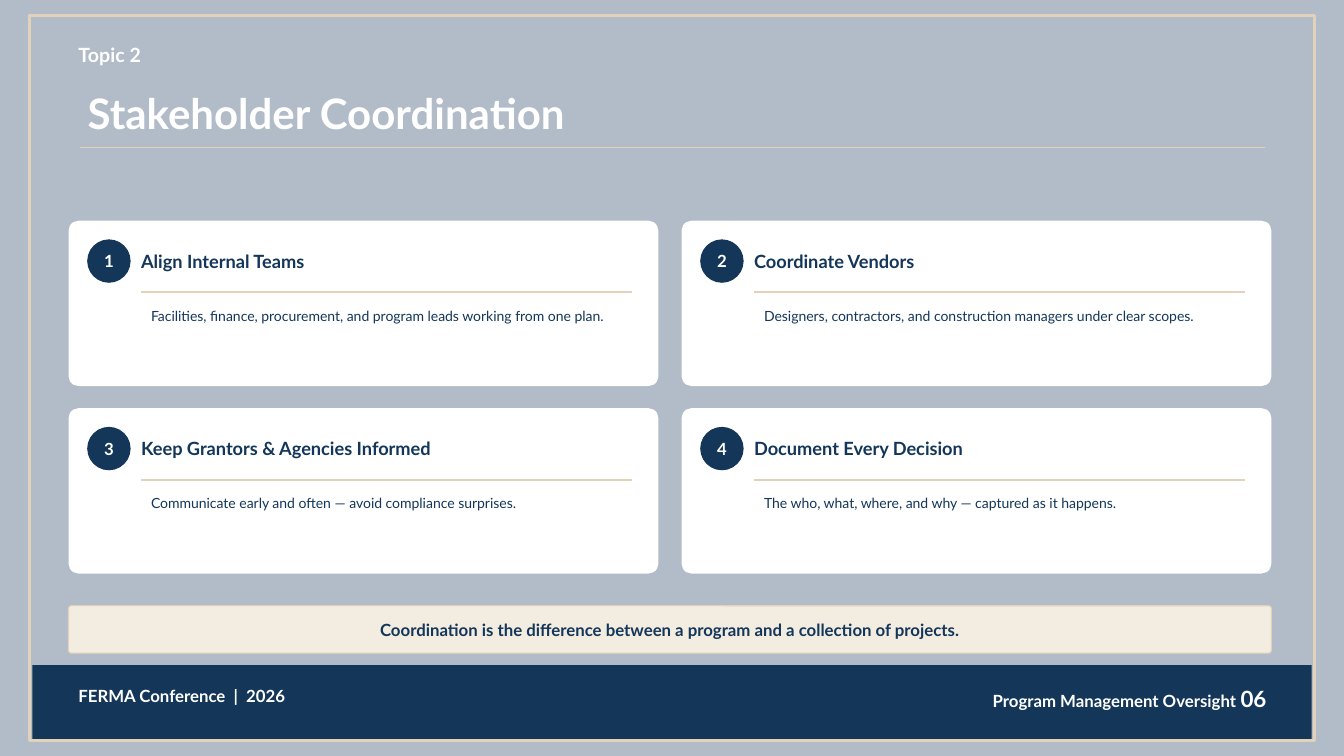
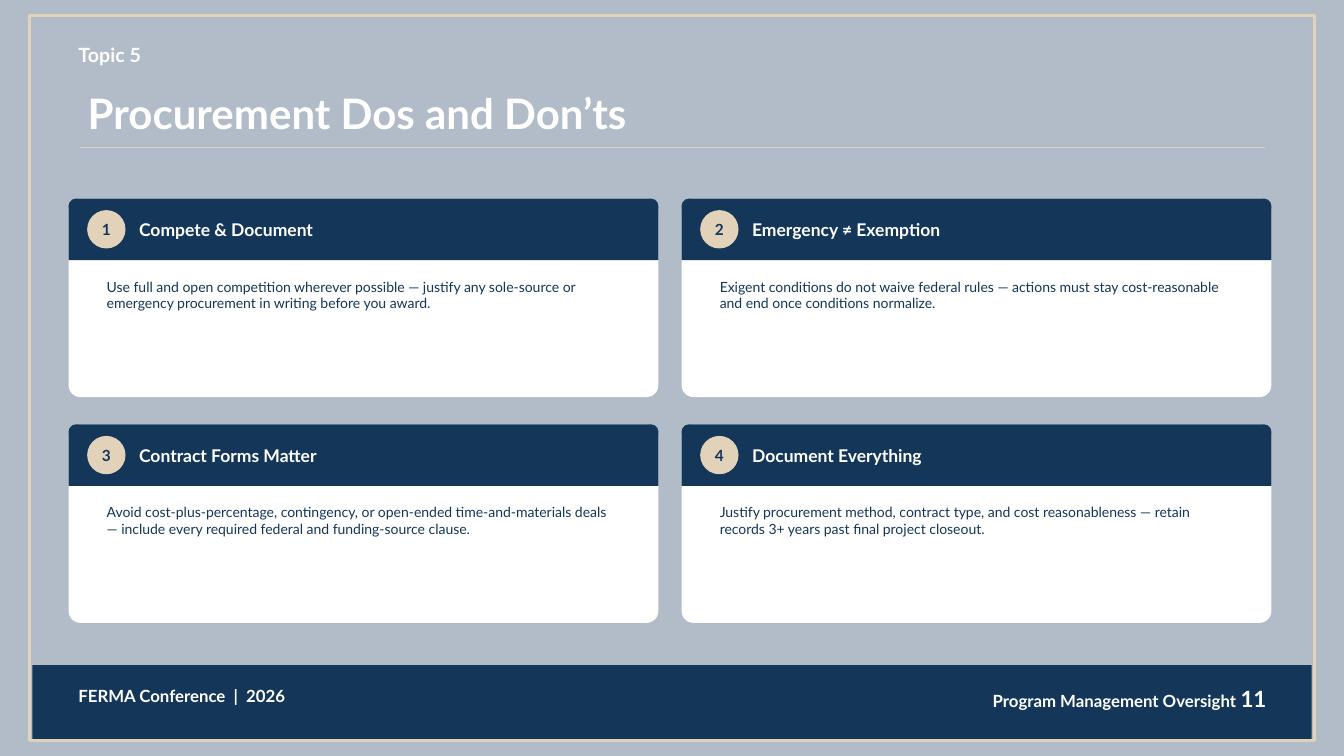
from dataclasses import dataclass
from typing import Callable, NamedTuple

from pptx import Presentation
from pptx.dml.color import RGBColor
from pptx.enum.shapes import MSO_CONNECTOR, MSO_SHAPE as Shape
from pptx.enum.text import MSO_ANCHOR as Anchor, MSO_AUTO_SIZE as AutoSize, PP_ALIGN as Align
from pptx.oxml.ns import qn
from pptx.slide import Slide
from pptx.util import Inches, Pt

COLORS = {
    "bg": "B1BCC8",
    "navy": "133659",
    "sand": "E2D2B9",
    "cream": "F3ECE1",
    "white": "FFFFFF",
}
FONT = "Lato"
MARGIN = 0.68
CARD_W = 5.85
COL_STEP = 6.08
COLS = 2
CONTENT_W = CARD_W + COL_STEP
CARD_ADJ = 0.06


class Box(NamedTuple):
    x: float
    y: float
    w: float
    h: float

    def emu(self) -> tuple:
        return tuple(Inches(v) for v in self)


class Style(NamedTuple):
    size: float
    color: str
    bold: bool = True


class Card(NamedTuple):
    heading: str
    body: str


@dataclass
class Grid:
    top: float
    card_h: float
    row_step: float

    def cell(self, i: int) -> Box:
        row, col = divmod(i, COLS)
        return Box(MARGIN + col * COL_STEP, self.top + row * self.row_step, CARD_W, self.card_h)


@dataclass
class Page:
    topic: str
    title: str
    number: str
    grid: Grid
    draw_card: Callable
    cards: list[Card]
    takeaway: str = ""


def rgb(name: str) -> RGBColor:
    return RGBColor.from_string(COLORS[name])


def write(sp, parts: list[tuple[str, Style]], align=Align.LEFT, anchor=Anchor.TOP, **margins: float) -> None:
    tf = sp.text_frame
    frame_format = {"word_wrap": True, "auto_size": AutoSize.NONE, "vertical_anchor": anchor}
    frame_format |= {f"margin_{side}": Inches(v) for side, v in margins.items()}
    for name, value in frame_format.items():
        setattr(tf, name, value)
    p = tf.paragraphs[0]
    p.alignment = align
    for text, style in parts:
        r = p.add_run()
        r.text = text
        for name, value in {"name": FONT, "size": Pt(style.size), "bold": style.bold}.items():
            setattr(r.font, name, value)
        r.font.color.rgb = rgb(style.color)


def add_text(s: Slide, box: Box, text: str, style: Style, **layout) -> None:
    write(s.shapes.add_textbox(*box.emu()), [(text, style)], **layout)


def add_block(s: Slide, kind: Shape, box: Box, fill: str = "", line: str = "",
              width: float = 0.75, adj: tuple = ()):
    sp = s.shapes.add_shape(kind, *box.emu())
    sp.shadow.inherit = False
    if fill:
        sp.fill.solid()
        sp.fill.fore_color.rgb = rgb(fill)
    else:
        sp.fill.background()
    if line:
        sp.line.color.rgb = rgb(line)
        sp.line.width = Pt(width)
    else:
        sp.line.fill.background()
    for i, value in enumerate(adj):
        sp.adjustments[i] = value
    return sp


def add_rule(s: Slide, x: float, y: float, w: float, width: float) -> None:
    ends = [Inches(v) for v in (x, y, x + w, y)]
    ln = s.shapes.add_connector(MSO_CONNECTOR.STRAIGHT, *ends)
    ln.line.color.rgb = rgb("sand")
    ln.line.width = Pt(width)
    sp_pr = ln._element.spPr
    sp_pr.append(sp_pr.makeelement(qn("a:effectLst"), {}))


def add_badge(s: Slide, box: Box, number: int, fill: str, style: Style) -> None:
    sp = add_block(s, Shape.OVAL, box, fill, fill)
    write(sp, [(str(number), style)], Align.CENTER, Anchor.MIDDLE, left=0, right=0, top=0, bottom=0)


def add_heading(s: Slide, box: Box, text: str, style: Style) -> None:
    add_text(s, box, text, style, anchor=Anchor.MIDDLE, left=0)


def draw_ruled_card(s: Slide, box: Box, number: int, card: Card) -> None:
    x, y = box.x, box.y
    add_block(s, Shape.ROUNDED_RECTANGLE, box, "white", adj=(CARD_ADJ,))
    add_badge(s, Box(x + 0.19, y + 0.19, 0.42, 0.42), number, "navy", Style(12, "white"))
    add_heading(s, Box(x + 0.72, y + 0.16, 4.93, 0.48), card.heading, Style(13, "navy"))
    add_rule(s, x + 0.72, y + 0.71, 4.87, 1.5)
    add_text(s, Box(x + 0.72, y + 0.81, 4.87, 0.68), card.body, Style(10, "navy", False))


def draw_banded_card(s: Slide, box: Box, number: int, card: Card) -> None:
    x, y = box.x, box.y
    band_h = 0.61
    add_block(s, Shape.ROUNDED_RECTANGLE, box, "white", adj=(CARD_ADJ,))
    add_block(s, Shape.ROUND_2_SAME_RECTANGLE, box._replace(h=band_h), "navy", adj=(0.12, 0))
    add_badge(s, Box(x + 0.19, y + 0.12, 0.37, 0.37), number, "sand", Style(11, "navy"))
    add_heading(s, Box(x + 0.7, y, 4.95, band_h), card.heading, Style(12.5, "white"))
    add_text(s, Box(x + 0.28, y + 0.74, 5.28, 1.09), card.body, Style(10, "navy", False))


def draw_frame(s: Slide, page: Page) -> None:
    s.background.fill.solid()
    s.background.fill.fore_color.rgb = rgb("bg")
    label = Style(12, "white")
    add_block(s, Shape.RECTANGLE, Box(0.32, 6.6, 12.69, 0.73), "navy")
    add_text(s, Box(MARGIN, 6.75, 3.9, 0.4), "FERMA Conference  |  2026", label)
    footer = s.shapes.add_textbox(*Box(8.46, 6.75, 4.2, 0.4).emu())
    parts = [("Program Management Oversight ", label), (page.number, Style(16, "white"))]
    write(footer, parts, Align.RIGHT)
    add_block(s, Shape.RECTANGLE, Box(0.29, 0.15, 12.75, 7.2), line="sand", width=2.25)
    add_text(s, Box(MARGIN, 0.38, 10.39, 0.33), page.topic, Style(14, "white"))
    title = s.shapes.title
    for name, value in zip(("left", "top", "width", "height"), Box(0.77, 0.82, 10.88, 0.61).emu()):
        setattr(title, name, value)
    write(title, [(page.title, Style(30, "white"))])
    add_rule(s, 0.79, 1.46, 11.76, 0.75)


def draw_takeaway(s: Slide, text: str) -> None:
    box = Box(MARGIN, 6.01, CONTENT_W, 0.47)
    sp = add_block(s, Shape.ROUNDED_RECTANGLE, box, "cream", "sand", adj=(CARD_ADJ,))
    write(sp, [(text, Style(12, "navy"))], Align.CENTER, Anchor.MIDDLE)


PAGES = [
    Page("Topic 2", "Stakeholder Coordination", "06", Grid(2.19, 1.64, 1.86), draw_ruled_card, [
        Card("Align Internal Teams",
             "Facilities, finance, procurement, and program leads working from one plan."),
        Card("Coordinate Vendors",
             "Designers, contractors, and construction managers under clear scopes."),
        Card("Keep Grantors & Agencies Informed",
             "Communicate early and often — avoid compliance surprises."),
        Card("Document Every Decision",
             "The who, what, where, and why — captured as it happens."),
    ], "Coordination is the difference between a program and a collection of projects."),
    Page("Topic 5", "Procurement Dos and Don’ts", "11", Grid(1.97, 1.97, 2.24), draw_banded_card, [
        Card("Compete & Document",
             "Use full and open competition wherever possible — justify any sole-source or "
             "emergency procurement in writing before you award."),
        Card("Emergency ≠ Exemption",
             "Exigent conditions do not waive federal rules — actions must stay cost-reasonable "
             "and end once conditions normalize."),
        Card("Contract Forms Matter",
             "Avoid cost-plus-percentage, contingency, or open-ended time-and-materials deals "
             "— include every required federal and funding-source clause."),
        Card("Document Everything",
             "Justify procurement method, contract type, and cost reasonableness — retain "
             "records 3+ years past final project closeout."),
    ]),
]


def main() -> None:
    prs = Presentation()
    prs.slide_width, prs.slide_height = Inches(13.33), Inches(7.5)
    title_only = prs.slide_layouts.get_by_name("Title Only")
    for page in PAGES:
        s = prs.slides.add_slide(title_only)
        draw_frame(s, page)
        if page.takeaway:
            draw_takeaway(s, page.takeaway)
        for i, card in enumerate(page.cards):
            page.draw_card(s, page.grid.cell(i), i + 1, card)
    prs.save("out.pptx")


if __name__ == "__main__":
    main()
